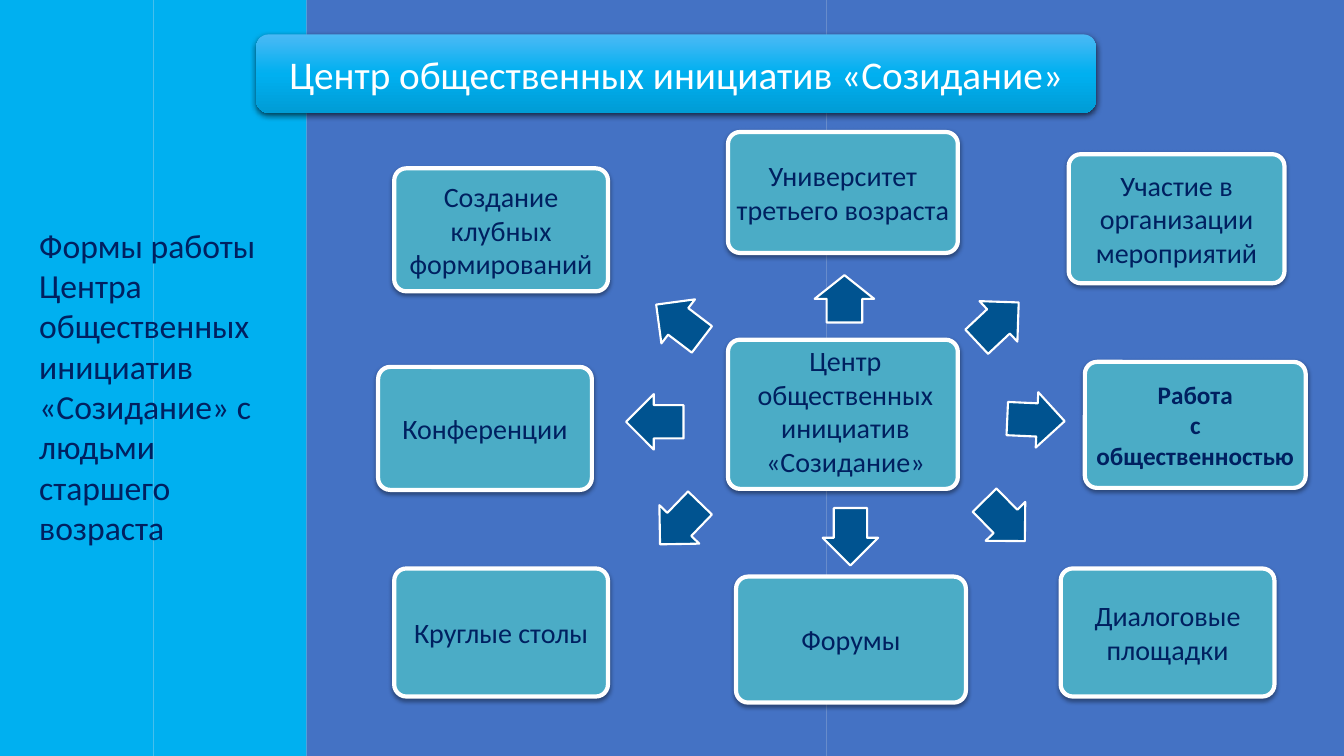
import copy

import pptx
import pptx.dml.color
import pptx.enum.shapes
import pptx.enum.text
import pptx.oxml
import pptx.oxml.ns
import pptx.util

RGB = pptx.dml.color.RGBColor
SHAPE = pptx.enum.shapes.MSO_SHAPE
ANCHOR = pptx.enum.text.MSO_ANCHOR
ALIGN = pptx.enum.text.PP_ALIGN

BACKGROUND = RGB(0xE7, 0xE6, 0xE6)
BLUE = RGB(0x44, 0x72, 0xC4)
CYAN = RGB(0x00, 0xB0, 0xF0)
CYAN_LIGHT = RGB(0x4B, 0xB9, 0xF5)
CYAN_DARK = RGB(0x00, 0x9C, 0xD5)
TEAL = RGB(0x4B, 0xAC, 0xC6)
ARROW_BLUE = RGB(0x00, 0x53, 0x90)
NAVY = RGB(0x00, 0x20, 0x60)
WHITE = RGB(0xFF, 0xFF, 0xFF)

FONT = "Calibri"
EMU_PER_PX = 9144  # 100 px to the inch
CORNER = 12
NODE_INSET = 3
ARROW_SIZE = (57, 55)

PANELS = [
    (820, 513, BLUE),
    (304, 516, BLUE),
    (152, 152, CYAN),
    (0, 152, CYAN),
]
HUB = (722, 337, 228, 148)
NODES = [
    ((730, 572, 228, 125), ["Форумы"]),
    ((722, 131, 228, 120), ["Университет третьего возраста"]),
    ((1060, 153, 214, 128), ["Участие в организации мероприятий"]),
    ((391, 167, 212, 122), ["Создание клубных формирований"]),
    ((391, 564, 212, 127), ["Круглые столы"]),
    ((1052, 564, 212, 127), ["Диалоговые площадки"]),
    ((375, 364, 212, 122), ["Конференции"]),
]
PUBLIC_WORK = ((1076, 359, 219, 125), ["Работа", "с общественностью"])
ARROWS = [
    (621, 391, 0),
    (999, 389, 182.6),
    (961, 292, 136.9),
    (645, 292, 37.3),
    (646, 492, 314),
    (968, 489, 225.5),
    (815, 505, 270),
]


def px(n):
    return pptx.util.Emu(n * EMU_PER_PX)


class SlideBuilder:
    def __init__(self, slide):
        self.slide = slide
        slide.background.fill.solid()
        slide.background.fill.fore_color.rgb = BACKGROUND

    def shape(self, kind, box, color, line_width=0):
        sp = self.slide.shapes.add_shape(kind, *map(px, box))
        sp.shadow.inherit = False
        sp.fill.solid()
        sp.fill.fore_color.rgb = color
        if line_width:
            sp.line.color.rgb = WHITE
            sp.line.width = pptx.util.Pt(line_width)
        else:
            sp.line.fill.background()
        return sp

    def drop_shadow(self, sp, alpha, blur, distance):
        """Cast a black shadow straight down; alpha in percent, lengths in points."""
        effects = sp._element.spPr.find(pptx.oxml.ns.qn("a:effectLst"))
        effects.append(pptx.oxml.parse_xml(
            f'<a:outerShdw {pptx.oxml.ns.nsdecls("a")} blurRad="{pptx.util.Pt(blur)}" '
            f'dist="{pptx.util.Pt(distance)}" dir="5400000" rotWithShape="0">'
            f'<a:srgbClr val="000000"><a:alpha val="{alpha * 1000}"/></a:srgbClr>'
            '</a:outerShdw>'))

    def text(self, sp, lines, size, color=NAVY, bold=False, align=ALIGN.CENTER,
             anchor=ANCHOR.MIDDLE):
        tf = sp.text_frame
        tf.word_wrap = True
        tf.vertical_anchor = anchor
        tf.text = "\n".join(lines)
        for p in tf.paragraphs:
            p.alignment = align
            p.font.name = FONT
            p.font.size = pptx.util.Pt(size)
            p.font.bold = bold
            p.font.color.rgb = color

    def text_box(self, box, lines, size, align):
        sp = self.slide.shapes.add_textbox(*map(px, box))
        self.text(sp, lines, size, align=align, anchor=ANCHOR.TOP)
        sp.text_frame.auto_size = pptx.enum.text.MSO_AUTO_SIZE.SHAPE_TO_FIT_TEXT

    def title(self, box, text):
        sp = self.shape(SHAPE.ROUNDED_RECTANGLE, box, CYAN)
        sp.fill.gradient()
        sp.fill.gradient_angle = 270
        stops = sp._element.spPr.find(".//" + pptx.oxml.ns.qn("a:gsLst"))
        stops.append(copy.deepcopy(stops[0]))
        colors = (CYAN_LIGHT, CYAN, CYAN_DARK)
        for i, (stop, color) in enumerate(zip(sp.fill.gradient_stops, colors)):
            stop.position = i / 2
            stop.color.rgb = color
        self.drop_shadow(sp, 63, 4.5, 1.5)
        self.text(sp, [text], 28, WHITE)

    def node(self, box, lines=(), size=20, bold=False):
        sp = self.shape(SHAPE.ROUNDED_RECTANGLE, box, TEAL, 3)
        sp.adjustments[0] = CORNER / min(box[2:])
        self.drop_shadow(sp, 38, 3.1, 1.6)
        if lines:
            tf = sp.text_frame
            tf.margin_left = tf.margin_right = px(NODE_INSET)
            tf.margin_top = tf.margin_bottom = px(NODE_INSET)
            self.text(sp, lines, size, bold=bold)

    def arrow(self, x, y, rotation, size=ARROW_SIZE):
        sp = self.shape(SHAPE.LEFT_ARROW, (x, y, *size), ARROW_BLUE, 1.5)
        sp.adjustments[0] = 0.6
        sp.adjustments[1] = 0.5
        sp.rotation = rotation


def main():
    prs = pptx.Presentation()
    prs.slide_width, prs.slide_height = px(1333), px(750)
    s = SlideBuilder(prs.slides.add_slide(prs.slide_layouts[6]))

    for x, width, color in PANELS:
        s.shape(SHAPE.RECTANGLE, (x, 0, width, 750), color)
    s.title((254, 34, 833, 78), "Центр общественных инициатив «Созидание»")

    s.arrow(814, 267, 90, (47, 59))
    s.node(HUB)
    s.text_box((738, 336, 201, 145),
               ["Центр", "общественных", "инициатив", "«Созидание»"], 20, ALIGN.CENTER)
    for box, lines in NODES:
        s.node(box, lines)
    s.node(*PUBLIC_WORK, size=18, bold=True)
    for arrow in ARROWS:
        s.arrow(*arrow)

    s.text_box((29, 218, 252, 401),
               ["Формы работы Центра общественных инициатив «Созидание» "
                "с людьми старшего возраста"], 24, ALIGN.LEFT)
    prs.save("out.pptx")


if __name__ == "__main__":
    main()
